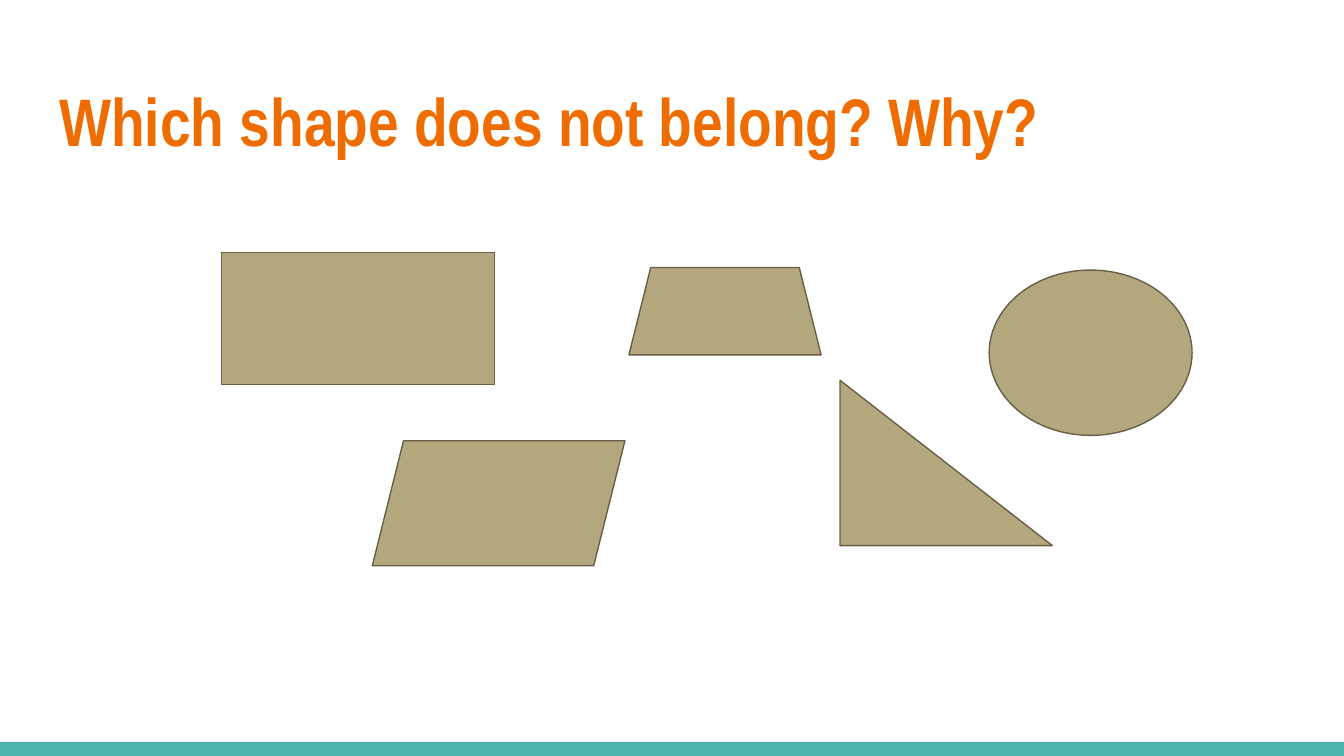
from dataclasses import dataclass

from pptx import Presentation
from pptx.dml.color import RGBColor
from pptx.enum.shapes import MSO_SHAPE
from pptx.enum.text import MSO_ANCHOR, MSO_AUTO_SIZE, PP_ALIGN
from pptx.util import Inches, Pt


@dataclass(frozen=True)
class Theme:
    background: str = "FFFFFF"
    title: str = "EF6C00"
    footer: str = "4DB6AC"
    fill: str = "B3A77D"
    outline: str = "695D46"
    font: str = "Arial Narrow"
    title_size: float = 36
    outline_width: float = 0.75


def write_text(frame, text, *, font, size, color, bold=False, align=PP_ALIGN.LEFT):
    para = frame.paragraphs[0]
    para.alignment = align
    span = para.add_run()
    span.text = text
    span.font.name = font
    span.font.size = Pt(size)
    span.font.bold = bold
    span.font.color.rgb = RGBColor.from_string(color)


class SlideBuilder:
    def __init__(self, page, theme):
        self.page = page
        self.theme = theme
        background = page.background.fill
        background.solid()
        background.fore_color.rgb = RGBColor.from_string(theme.background)

    def title(self, text, left, top, width, height):
        box = self.page.shapes.title
        box.left, box.top = Inches(left), Inches(top)
        box.width, box.height = Inches(width), Inches(height)
        frame = box.text_frame
        frame.word_wrap = True
        frame.auto_size = MSO_AUTO_SIZE.NONE
        frame.vertical_anchor = MSO_ANCHOR.TOP
        frame.margin_left = frame.margin_right = Inches(0.1)
        frame.margin_top = frame.margin_bottom = Inches(0.1)
        write_text(frame, text, font=self.theme.font, size=self.theme.title_size,
                   color=self.theme.title, bold=True)

    def shape(self, kind, left, top, width, height, *, fill, outline=None):
        shape = self.page.shapes.add_shape(
            kind, Inches(left), Inches(top), Inches(width), Inches(height))
        shape.shadow.inherit = False
        shape.fill.solid()
        shape.fill.fore_color.rgb = RGBColor.from_string(fill)
        if outline:
            shape.line.color.rgb = RGBColor.from_string(outline)
            shape.line.width = Pt(self.theme.outline_width)
        else:
            shape.line.fill.background()

    def footer_bar(self, left, top, width, height):
        self.shape(MSO_SHAPE.RECTANGLE, left, top, width, height, fill=self.theme.footer)

    def puzzle_shape(self, kind, left, top, width, height):
        self.shape(kind, left, top, width, height,
                   fill=self.theme.fill, outline=self.theme.outline)


PUZZLE_SHAPES = [
    (MSO_SHAPE.RIGHT_TRIANGLE, 6.25, 2.83, 1.58, 1.23),
    (MSO_SHAPE.RECTANGLE, 1.65, 1.88, 2.03, 0.98),
    (MSO_SHAPE.PARALLELOGRAM, 2.77, 3.28, 1.88, 0.93),
    (MSO_SHAPE.TRAPEZOID, 4.68, 1.99, 1.43, 0.65),
    (MSO_SHAPE.OVAL, 7.36, 2.01, 1.51, 1.23),
]


def main():
    deck = Presentation()
    deck.slide_width = Inches(10)
    deck.slide_height = deck.slide_width * 9 // 16
    page = deck.slides.add_slide(deck.slide_layouts[5])
    builder = SlideBuilder(page, Theme())
    builder.footer_bar(0, 5.52, 10, 0.11)
    builder.title("Which shape does not belong? Why?", 0.34, 0.49, 9.32, 0.77)
    for kind, left, top, width, height in PUZZLE_SHAPES:
        builder.puzzle_shape(kind, left, top, width, height)
    deck.save("out.pptx")


if __name__ == "__main__":
    main()
